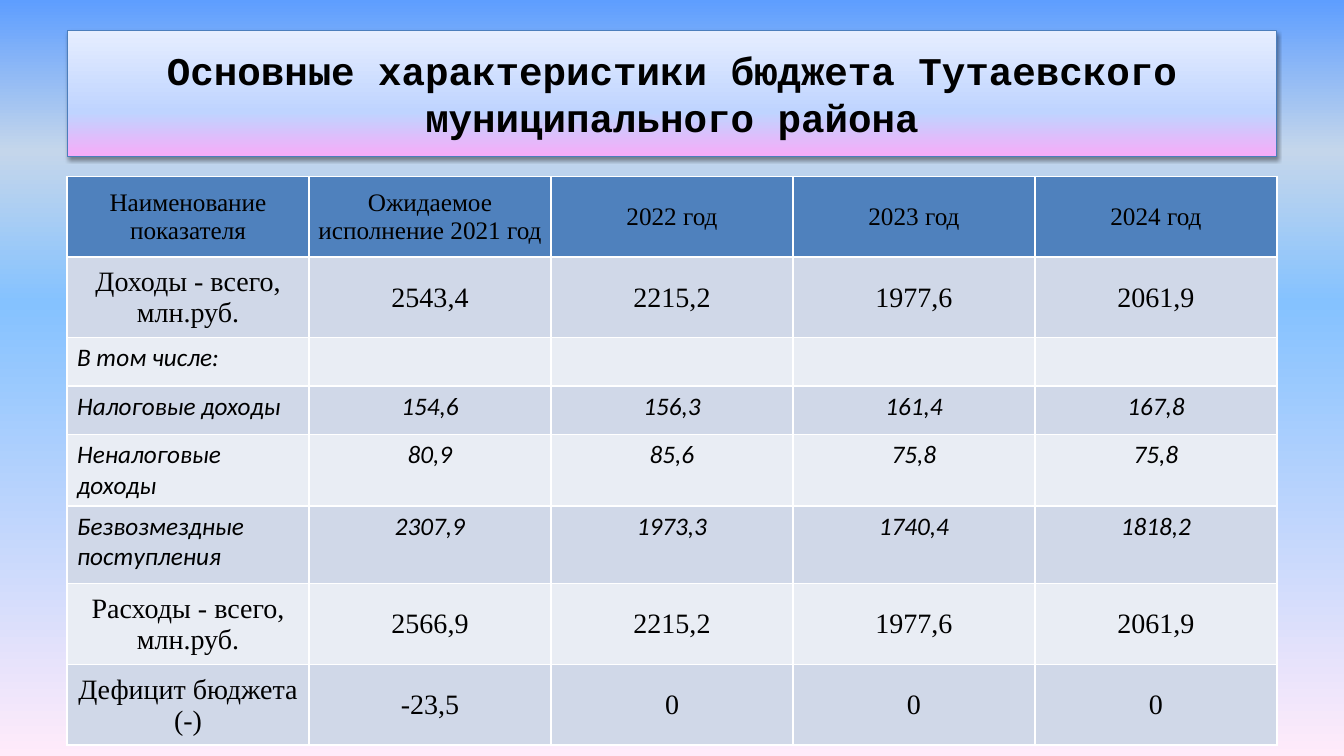
from lxml import etree
from pptx import Presentation
from pptx import util as u
from pptx.dml.color import RGBColor
from pptx.enum import text
from pptx.oxml.ns import qn

# Content: each row has a style and its cells
TITLE = "Основные характеристики бюджета Тутаевского муниципального района"
ROWS = [
    ("header", ["Наименование показателя", "Ожидаемое исполнение 2021 год",
                "2022 год", "2023 год", "2024 год"]),
    ("total", ["Доходы - всего, млн.руб.", "2543,4", "2215,2", "1977,6", "2061,9"]),
    ("detail", ["В том числе:", "", "", "", ""]),
    ("detail", ["Налоговые доходы", "154,6", "156,3", "161,4", "167,8"]),
    ("detail", ["Неналоговые доходы", "80,9", "85,6", "75,8", "75,8"]),
    ("detail", ["Безвозмездные поступления", "2307,9", "1973,3", "1740,4", "1818,2"]),
    ("total", ["Расходы - всего, млн.руб.", "2566,9", "2215,2", "1977,6", "2061,9"]),
    ("total", ["Дефицит бюджета (-)", "-23,5", "0", "0", "0"]),
]
ROW_HEIGHTS = [0.8, 0.8, 0.48, 0.48, 0.48, 0.77, 0.8, 0.8]

# Style: font, size, italic, anchor, margins (left, top, right, bottom)
TIGHT = (0.01, 0.01, 0.01, 0)
ROOMY = (0.1, 0.05, 0.1, 0.05)
STYLES = {
    "header": ("Times New Roman", 18, False, text.MSO_ANCHOR.MIDDLE, TIGHT),
    "total": ("Times New Roman", 20, False, text.MSO_ANCHOR.MIDDLE, TIGHT),
    "detail": ("Calibri", 18, True, text.MSO_ANCHOR.TOP, ROOMY),
}
BLACK = RGBColor(0x00, 0x00, 0x00)
HEADER_BLUE = RGBColor(0x4F, 0x81, 0xBD)
BAND_DARK = RGBColor(0xD0, 0xD8, 0xE8)
BAND_LIGHT = RGBColor(0xE9, 0xED, 0xF4)
TITLE_LINE = RGBColor(0x4B, 0x7E, 0xBC)
SKY = [(0, RGBColor(0x5E, 0x9E, 0xFF)), (20, RGBColor(0xC4, 0xD6, 0xEB)),
       (40, RGBColor(0x85, 0xC2, 0xFF)), (100, RGBColor(0xFF, 0xEB, 0xFA))]
TITLE_GLOW = [(0, RGBColor(0xF6, 0xAC, 0xF8)), (35, RGBColor(0xBF, 0xD4, 0xFF)),
              (100, RGBColor(0xE6, 0xEE, 0xFF))]

# Layout in inches
SLIDE_WIDTH, SLIDE_HEIGHT = 13.33, 7.5
CONTENT_WIDTH = 12
LEFT = (SLIDE_WIDTH - CONTENT_WIDTH) / 2
TITLE_TOP, TITLE_HEIGHT = 0.3, 1.25
TABLE_TOP = 1.75


def add_element(parent, tag, **attributes):
    return etree.SubElement(parent, qn(tag), attributes)


def set_gradient(gradient, stops, degrees):
    """Fill a gradient with any number of stops; degrees run clockwise."""
    for child in list(gradient):
        gradient.remove(child)
    stop_list = add_element(gradient, "a:gsLst")
    for percent, color in stops:
        stop = add_element(stop_list, "a:gs", pos=str(percent * 1000))
        add_element(stop, "a:srgbClr", val=str(color))
    add_element(gradient, "a:lin", ang=str(degrees * 60000), scaled="0")


def add_shadow(shape):
    shape.shadow.inherit = False
    effects = shape.element.spPr.find(qn("a:effectLst"))
    shadow = add_element(effects, "a:outerShdw", blurRad=str(u.Pt(3.1)), dist=str(u.Pt(1.6)),
                         dir="5400000", rotWithShape="0")
    color = add_element(shadow, "a:srgbClr", val=str(BLACK))
    add_element(color, "a:alpha", val="38000")


def set_font(paragraph, name, size, bold=False, italic=False):
    font = paragraph.font
    font.name, font.size = name, u.Pt(size)
    font.bold, font.italic = bold, italic
    font.color.rgb = BLACK


def format_title(title):
    title.left, title.top = u.Inches(LEFT), u.Inches(TITLE_TOP)
    title.width, title.height = u.Inches(CONTENT_WIDTH), u.Inches(TITLE_HEIGHT)
    title.fill.gradient()
    set_gradient(title.element.spPr.find(qn("a:gradFill")), TITLE_GLOW, 270)
    title.line.color.rgb = TITLE_LINE
    title.line.width = u.Pt(0.75)
    add_shadow(title)
    frame = title.text_frame
    frame.text = TITLE
    frame.word_wrap = True
    frame.vertical_anchor = text.MSO_ANCHOR.MIDDLE
    frame.paragraphs[0].alignment = text.PP_ALIGN.CENTER
    set_font(frame.paragraphs[0], "Courier New", 28, bold=True)


def format_cell(cell, value, style, fill, centred):
    name, size, italic, anchor, margins = STYLES[style]
    cell.text = value
    cell.fill.solid()
    cell.fill.fore_color.rgb = fill
    cell.vertical_anchor = anchor
    (cell.margin_left, cell.margin_top,
     cell.margin_right, cell.margin_bottom) = map(u.Inches, margins)
    paragraph = cell.text_frame.paragraphs[0]
    paragraph.alignment = text.PP_ALIGN.CENTER if centred else text.PP_ALIGN.LEFT
    set_font(paragraph, name, size, italic=italic)


def add_budget_table(slide):
    columns = len(ROWS[0][1])
    table = slide.shapes.add_table(
        len(ROWS), columns, u.Inches(LEFT), u.Inches(TABLE_TOP),
        u.Inches(CONTENT_WIDTH), u.Inches(sum(ROW_HEIGHTS))).table
    for r, (style, values) in enumerate(ROWS):
        table.rows[r].height = u.Inches(ROW_HEIGHTS[r])
        band = BAND_DARK if r % 2 else BAND_LIGHT
        fill = HEADER_BLUE if style == "header" else band
        for c, value in enumerate(values):
            format_cell(table.cell(r, c), value, style, fill, c > 0 or style != "detail")


def main():
    presentation = Presentation()
    presentation.slide_width = u.Inches(SLIDE_WIDTH)
    presentation.slide_height = u.Inches(SLIDE_HEIGHT)
    slide = presentation.slides.add_slide(presentation.slide_layouts[5])

    # Background
    slide.background.fill.gradient()
    set_gradient(slide.element.xpath(".//p:bgPr/a:gradFill")[0], SKY, 90)

    # Title and table
    format_title(slide.shapes.title)
    add_budget_table(slide)
    presentation.save("out.pptx")


if __name__ == "__main__":
    main()
